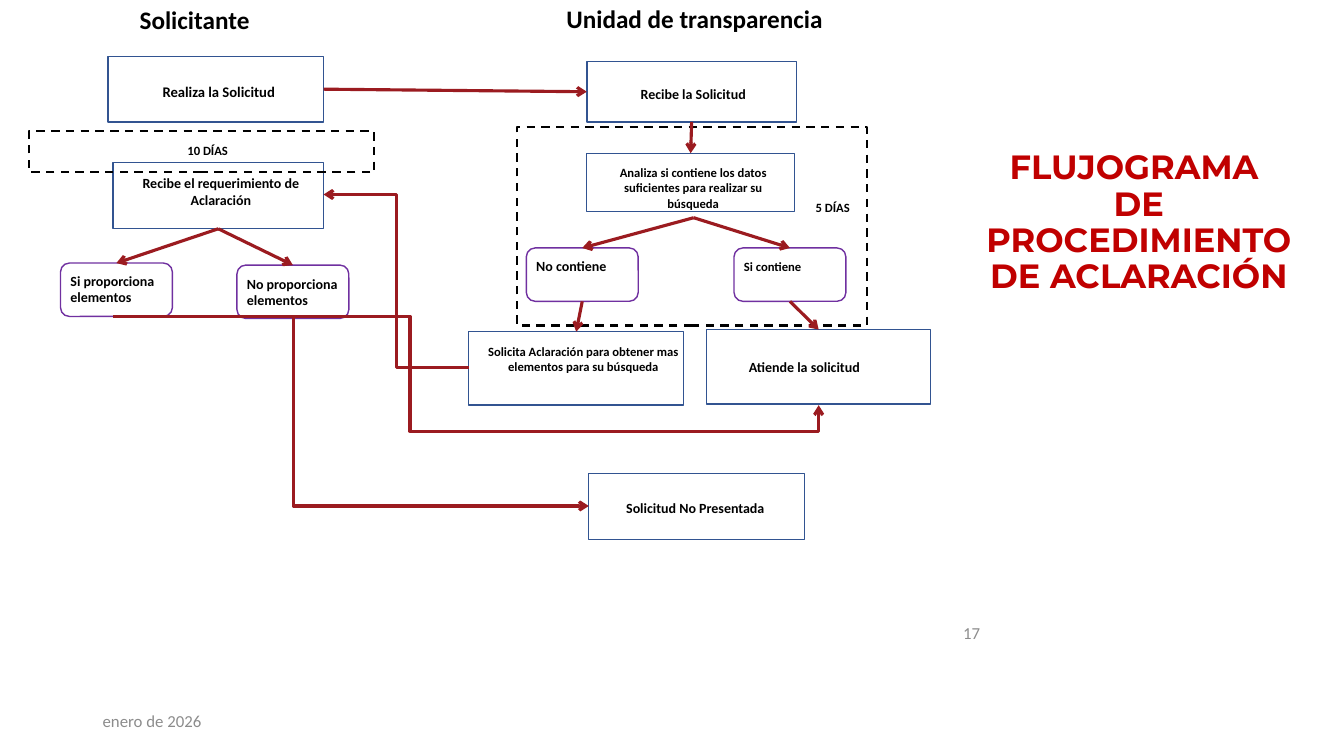
from lxml import etree
from pptx import Presentation
from pptx.dml.color import RGBColor
from pptx.enum.dml import MSO_LINE
from pptx.enum.shapes import MSO_CONNECTOR, MSO_SHAPE
from pptx.enum.text import MSO_ANCHOR, MSO_AUTO_SIZE, PP_ALIGN
from pptx.oxml.ns import qn
from pptx.util import Inches, Pt

RED = RGBColor(0xC0, 0x00, 0x00)
DARK_RED = RGBColor(0x9B, 0x1B, 0x20)
BLUE = RGBColor(0x32, 0x54, 0x91)
PURPLE = RGBColor(0x70, 0x30, 0xA0)
BLACK = RGBColor(0x00, 0x00, 0x00)
GRAY = RGBColor(0x8C, 0x8C, 0x8C)
RECTANGLE, ROUNDED = MSO_SHAPE.RECTANGLE, MSO_SHAPE.ROUNDED_RECTANGLE
STRAIGHT, ELBOW = MSO_CONNECTOR.STRAIGHT, MSO_CONNECTOR.ELBOW
LEFT, CENTER, RIGHT = PP_ALIGN.LEFT, PP_ALIGN.CENTER, PP_ALIGN.RIGHT
MIDDLE = MSO_ANCHOR.MIDDLE
TOP_SIDE, LEFT_SIDE, BOTTOM_SIDE, RIGHT_SIDE = range(4)

presentation = Presentation()
presentation.slide_width = Inches(13.33)
presentation.slide_height = Inches(7.5)
slide = presentation.slides.add_slide(presentation.slide_layouts[5])


def add_text(text, box, size, alignment, color=BLACK, bold=True):
    text_box = slide.shapes.add_textbox(*map(Inches, box))
    text_frame = text_box.text_frame
    text_frame.word_wrap = True
    text_frame.text = text
    paragraph = text_frame.paragraphs[0]
    paragraph.alignment = alignment
    paragraph.font.name = "Calibri"
    paragraph.font.size = Pt(size)
    paragraph.font.bold = bold
    paragraph.font.color.rgb = color
    return text_frame


def add_arrow(kind, start, end):
    connector = slide.shapes.add_connector(kind, *map(Inches, start + end))
    connector.line.color.rgb = DARK_RED
    connector.line.width = Pt(2.25)
    properties = connector._element.spPr
    etree.SubElement(properties.find(qn("a:ln")), qn("a:tailEnd"), type="arrow")
    etree.SubElement(properties, qn("a:effectLst"))
    return connector


# Title and footer
title = slide.shapes.title
title.left, title.top, title.width, title.height = map(Inches, (9.59, 1.45, 3.41, 1.53))
title_frame = title.text_frame
title_frame.text = "FLUJOGRAMA \vDE PROCEDIMIENTO DE ACLARACIÓN"
title_frame.word_wrap = True
title_frame.auto_size = MSO_AUTO_SIZE.NONE
title_frame.vertical_anchor = MIDDLE
title_paragraph = title_frame.paragraphs[0]
title_paragraph.alignment = CENTER
title_paragraph.line_spacing = 0.9
title_paragraph.font.name = "Montserrat"
title_paragraph.font.size = Pt(24)
title_paragraph.font.bold = True
title_paragraph.font.color.rgb = RED

for text, box, alignment in (
    ("enero de 2026", (0.92, 6.95, 3, 0.4), LEFT),
    ("17", (6.82, 6.08, 3, 0.4), RIGHT),
):
    add_text(text, box, 12, alignment, GRAY, bold=False).vertical_anchor = MIDDLE

# Steps, decisions and deadline frames
outlines = (
    ("realiza", RECTANGLE, BLUE, (1.07, 0.56, 2.14, 0.65)),
    ("recibe", RECTANGLE, BLUE, (5.82, 0.61, 2.08, 0.6)),
    ("analiza", RECTANGLE, BLUE, (5.82, 1.52, 2.06, 0.58)),
    ("requerimiento", RECTANGLE, BLUE, (1.12, 1.61, 2.09, 0.66)),
    ("solicita", RECTANGLE, BLUE, (4.65, 3.29, 2.13, 0.73)),
    ("atiende", RECTANGLE, BLUE, (7.01, 3.27, 2.22, 0.74)),
    ("no presentada", RECTANGLE, BLUE, (5.84, 4.7, 2.14, 0.65)),
    ("si proporciona", ROUNDED, PURPLE, (0.6, 2.61, 1.11, 0.53)),
    ("no proporciona", ROUNDED, PURPLE, (2.35, 2.63, 1.11, 0.53)),
    ("no contiene", ROUNDED, PURPLE, (5.22, 2.46, 1.11, 0.53)),
    ("si contiene", ROUNDED, PURPLE, (7.28, 2.46, 1.11, 0.53)),
    ("10 días", RECTANGLE, BLACK, (0.29, 1.3, 3.42, 0.41)),
    ("5 días", RECTANGLE, BLACK, (5.13, 1.26, 3.47, 1.97)),
)
steps = {}
for name, kind, color, box in outlines:
    shape = slide.shapes.add_shape(kind, *map(Inches, box))
    shape.shadow.inherit = False
    shape.fill.background()
    shape.line.color.rgb = color
    shape.line.width = Pt(1)
    if color == BLACK:
        shape.line.width = Pt(1.5)
        shape.line.dash_style = MSO_LINE.DASH
    steps[name] = shape

labels = (
    ("Solicitante", (0.86, -0.01, 2.14, 0.42), 18, CENTER),
    ("Unidad de transparencia", (5.22, -0.02, 3.34, 0.42), 18, CENTER),
    ("Realiza la Solicitud", (1.15, 0.77, 2.04, 0.29), 10.5, CENTER),
    ("Recibe la Solicitud", (5.9, 0.8, 1.95, 0.28), 10, CENTER),
    ("Analiza si contiene los datos suficientes para realizar su búsqueda",
     (5.9, 1.59, 1.95, 0.57), 9, CENTER),
    ("Recibe el requerimiento de Aclaración", (1.25, 1.68, 1.88, 0.45), 10, CENTER),
    ("Solicita Aclaración para obtener mas elementos para su búsqueda",
     (4.73, 3.36, 2.11, 0.41), 9, CENTER),
    ("Atiende la solicitud", (7.33, 3.51, 1.76, 0.28), 10, LEFT),
    ("Solicitud No Presentada", (5.9, 4.91, 1.99, 0.28), 10, CENTER),
    ("Si proporciona elementos", (0.6, 2.65, 1.28, 0.45), 10, LEFT),
    ("No proporciona elementos", (2.35, 2.68, 1.28, 0.45), 10, LEFT),
    ("No contiene", (5.22, 2.51, 1.28, 0.28), 10, LEFT),
    ("Si contiene", (7.28, 2.52, 1.28, 0.26), 9, LEFT),
    ("10 DÍAS", (1.63, 1.37, 0.86, 0.26), 9, CENTER),
    ("5 DÍAS", (7.83, 1.93, 0.86, 0.26), 9, CENTER),
)
for text, box, size, alignment in labels:
    add_text(text, box, size, alignment).auto_size = MSO_AUTO_SIZE.SHAPE_TO_FIT_TEXT

# Straight arrows between steps
for origin, origin_side, target, target_side in (
    ("realiza", RIGHT_SIDE, "recibe", LEFT_SIDE),
    ("recibe", BOTTOM_SIDE, "analiza", TOP_SIDE),
    ("no contiene", BOTTOM_SIDE, "solicita", TOP_SIDE),
    ("si contiene", BOTTOM_SIDE, "atiende", TOP_SIDE),
    ("requerimiento", BOTTOM_SIDE, "si proporciona", TOP_SIDE),
    ("requerimiento", BOTTOM_SIDE, "no proporciona", TOP_SIDE),
):
    arrow = add_arrow(STRAIGHT, (0, 0), (1, 1))
    arrow.begin_connect(steps[origin], origin_side)
    arrow.end_connect(steps[target], target_side)

# The analysis branches start just below its box
for target in ("no contiene", "si contiene"):
    arrow = add_arrow(STRAIGHT, (6.88, 2.16), (7.83, 2.46))
    arrow.end_connect(steps[target], TOP_SIDE)

# Elbow arrows with two, one and three bends
add_arrow(ELBOW, (4.65, 3.65), (3.21, 1.93))

not_presented_arrow = add_arrow(ELBOW, (5.31, 2.62), (3.44, 5.55))
properties = not_presented_arrow._element.spPr
properties.find(qn("a:prstGeom")).set("prst", "bentConnector2")
properties.find(qn("a:xfrm")).set("rot", str(270 * 60000))

attended_arrow = add_arrow(ELBOW, (1.12, 3.14), (8.12, 4.02))
geometry = attended_arrow._element.spPr.find(qn("a:prstGeom"))
geometry.set("prst", "bentConnector4")
adjustments = geometry.find(qn("a:avLst"))
for name, value in (("adj1", 42100), ("adj2", 129400)):
    etree.SubElement(adjustments, qn("a:gd"), name=name, fmla=f"val {value}")

presentation.save("out.pptx")
